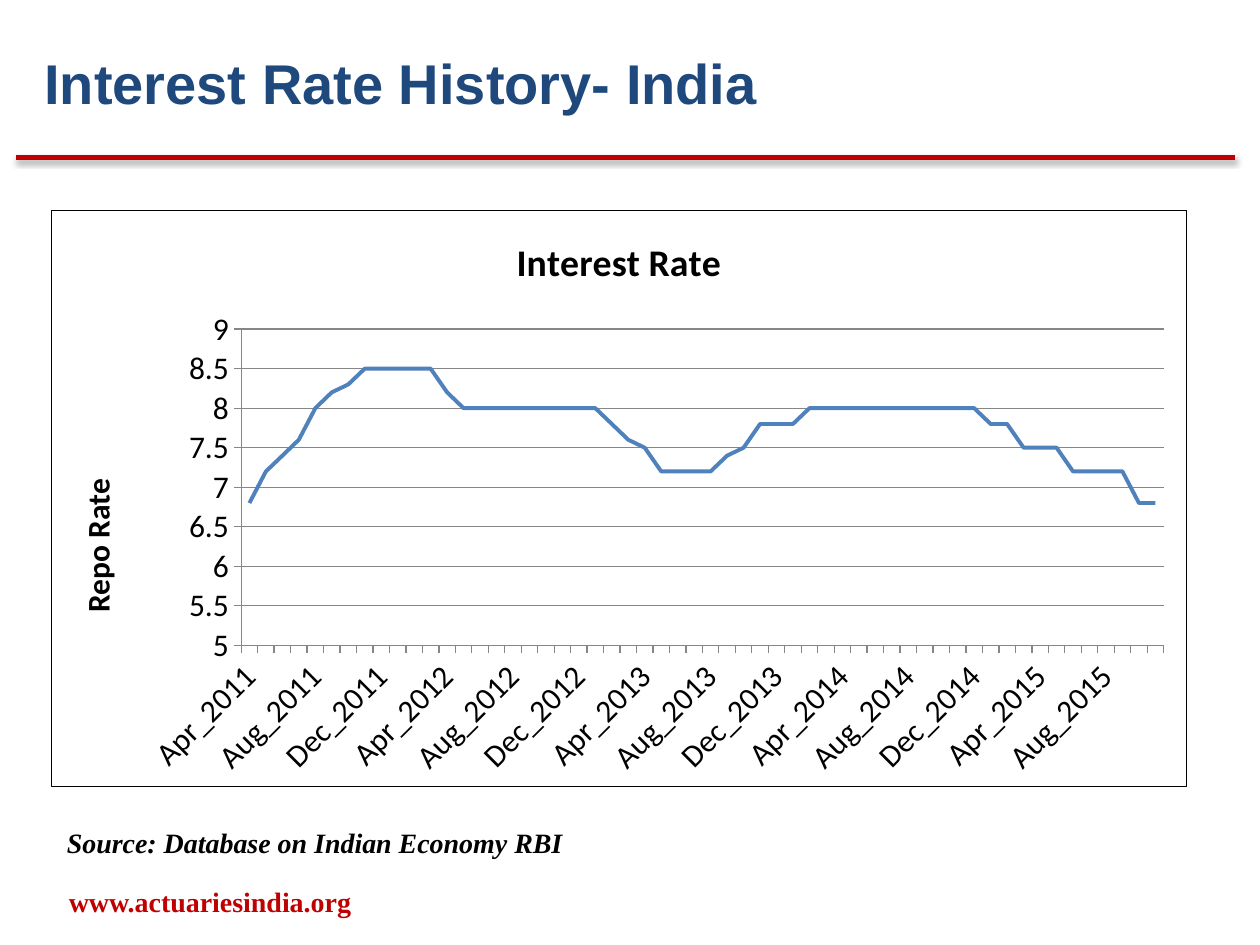
from dataclasses import dataclass
from itertools import chain, repeat

from lxml.etree import SubElement
from pptx import Presentation
from pptx.chart.data import CategoryChartData
from pptx.dml.color import RGBColor
from pptx.enum.chart import XL_CHART_TYPE, XL_MARKER_STYLE, XL_TICK_MARK
from pptx.enum.shapes import MSO_CONNECTOR
from pptx.enum.text import MSO_ANCHOR, PP_ALIGN
from pptx.oxml import parse_xml
from pptx.oxml.ns import nsdecls, qn
from pptx.util import Cm, Pt

COLORS = {
    "title": "1F497D",
    "accent": "C00000",
    "text": "000000",
    "series": "4F81BD",
    "grid": "868686",
}
MONTHS = "Jan Feb Mar Apr May Jun Jul Aug Sep Oct Nov Dec".split()
FIRST_MONTH, FIRST_YEAR = 3, 2011
RATE_RUNS = [
    (6.8, 1), (7.2, 1), (7.4, 1), (7.6, 1), (8, 1), (8.2, 1), (8.3, 1),
    (8.5, 5), (8.2, 1), (8, 9), (7.8, 1), (7.6, 1), (7.5, 1), (7.2, 4),
    (7.4, 1), (7.5, 1), (7.8, 3), (8, 11), (7.8, 2), (7.5, 3), (7.2, 4), (6.8, 2),
]


@dataclass
class Caption:
    text: str
    top: float
    width: float
    height: float
    color: str
    italic: bool


CAPTIONS = [
    Caption("www.actuariesindia.org", 17.65, 8.07, 1.02, "accent", False),
    Caption("Source: Database on Indian Economy RBI", 16.73, 12.29, 0.51, "text", True),
]


def color(name: str) -> RGBColor:
    return RGBColor.from_string(COLORS[name])


def style_font(font, name: str, size: float, color_name: str, bold: bool = True) -> None:
    font.name = name
    font.size = Pt(size)
    font.bold = bold
    font.color.rgb = color(color_name)


def style_line(line, color_name: str, width: float) -> None:
    line.color.rgb = color(color_name)
    line.width = Pt(width)


def add_title(slide) -> None:
    title = slide.shapes.title
    title.left, title.top, title.width, title.height = Cm(0.64), Cm(0.85), Cm(22.89), Cm(1.63)
    title.text_frame.text = "Interest Rate History- India"
    title.text_frame.vertical_anchor = MSO_ANCHOR.TOP
    paragraph = title.text_frame.paragraphs[0]
    paragraph.alignment = PP_ALIGN.LEFT
    style_font(paragraph.font, "Arial", 32, "title")


def add_rule(slide) -> None:
    rule = slide.shapes.add_connector(
        MSO_CONNECTOR.STRAIGHT, Cm(0.33), Cm(3.18), Cm(24.9), Cm(3.18)
    )
    style_line(rule.line, "accent", 3)
    effects = SubElement(rule.element.spPr, qn("a:effectLst"))
    shadow = SubElement(
        effects, qn("a:outerShdw"), blurRad="40000", dist="20000", dir="5400000", rotWithShape="0"
    )
    shadow_color = SubElement(shadow, qn("a:srgbClr"), val=COLORS["text"])
    SubElement(shadow_color, qn("a:alpha"), val="38000")


def add_caption(slide, caption: Caption) -> None:
    box = slide.shapes.add_textbox(
        Cm(0.2), Cm(caption.top), Cm(caption.width), Cm(caption.height)
    )
    frame = box.text_frame
    frame.word_wrap = True
    frame.vertical_anchor = MSO_ANCHOR.MIDDLE
    paragraph = frame.paragraphs[0]
    paragraph.text = caption.text
    paragraph.alignment = PP_ALIGN.CENTER
    style_font(paragraph.font, "Times New Roman", 16, caption.color)
    paragraph.font.italic = caption.italic


def set_layout(parent, index: int, **fractions: float) -> None:
    for old_layout in parent.findall(qn("c:layout")):
        parent.remove(old_layout)
    layout = parse_xml(f"<c:layout {nsdecls('c')}><c:manualLayout/></c:layout>")
    manual = layout[0]
    if "w" in fractions:
        SubElement(manual, qn("c:layoutTarget"), val="inner")
    for key in ("x", "y"):
        SubElement(manual, qn(f"c:{key}Mode"), val="edge")
    for key, fraction in fractions.items():
        SubElement(manual, qn(f"c:{key}"), val=str(fraction))
    parent.insert(index, layout)


def set_title(owner, text: str, size: float) -> None:
    owner.has_title = True
    title = owner.chart_title if hasattr(owner, "chart_title") else owner.axis_title
    title.text_frame.text = text
    style_font(title.text_frame.paragraphs[0].font, "Calibri", size, "text")


def rate_data() -> CategoryChartData:
    rates = list(chain.from_iterable(repeat(rate, count) for rate, count in RATE_RUNS))
    months = range(FIRST_MONTH, FIRST_MONTH + len(rates))
    data = CategoryChartData()
    data.categories = [f"{MONTHS[month % 12]}_{FIRST_YEAR + month // 12}" for month in months]
    data.add_series("Series 1", rates)
    return data


def add_rate_chart(slide) -> None:
    chart = slide.shapes.add_chart(
        XL_CHART_TYPE.LINE, Cm(1.03), Cm(4.23), Cm(22.9), Cm(11.64), rate_data()
    ).chart
    chart.has_legend = False
    style_font(chart.font, "Calibri", 18, "text", bold=False)
    set_title(chart, "Interest Rate", 21.6)

    plot = chart.plots[0]
    plot.vary_by_categories = False
    series = plot.series[0]
    series.smooth = False
    series.marker.style = XL_MARKER_STYLE.NONE
    style_line(series.format.line, "series", 2.25)

    for axis in (chart.category_axis, chart.value_axis):
        axis.major_tick_mark = XL_TICK_MARK.OUTSIDE
        axis.minor_tick_mark = XL_TICK_MARK.NONE
        style_line(axis.format.line, "grid", 0.75)
        style_font(axis.tick_labels.font, "Calibri", 18, "text", bold=False)

    value_axis = chart.value_axis
    value_axis.minimum_scale, value_axis.maximum_scale, value_axis.major_unit = 5, 9, 0.5
    value_axis.tick_labels.number_format = "General"
    value_axis.tick_labels.number_format_is_linked = False
    value_axis.has_major_gridlines = True
    style_line(value_axis.major_gridlines.format.line, "grid", 0.75)
    set_title(value_axis, "Repo Rate ", 18)

    chart_space = chart.element
    category_element = chart_space.find(".//" + qn("c:catAx"))
    category_element.find(qn("c:txPr")).find(qn("a:bodyPr")).set("rot", "-2700000")
    category_element.find(qn("c:noMultiLvlLbl")).addprevious(
        parse_xml(f'<c:tickLblSkip {nsdecls("c")} val="4"/>')
    )
    axis_title = chart_space.find(".//" + qn("c:valAx")).find(qn("c:title"))
    axis_title.find(".//" + qn("a:bodyPr")).set("rot", "-5400000")
    set_layout(axis_title, 1, x=0.016, y=0.443)
    set_layout(
        chart_space.find(".//" + qn("c:plotArea")), 0, x=0.167, y=0.206, w=0.813, h=0.549
    )
    chart_space.find(qn("c:chart")).addnext(parse_xml(
        f'<c:spPr {nsdecls("c", "a")}><a:noFill/><a:ln w="{Pt(0.75)}"><a:solidFill>'
        f'<a:srgbClr val="{COLORS["text"]}"/></a:solidFill></a:ln></c:spPr>'
    ))


def main() -> None:
    presentation = Presentation()
    presentation.slide_width, presentation.slide_height = Cm(25.4), Cm(19.05)
    slide = presentation.slides.add_slide(presentation.slide_layouts[5])
    add_rule(slide)
    add_title(slide)
    add_rate_chart(slide)
    for caption in CAPTIONS:
        add_caption(slide, caption)
    presentation.save("out.pptx")


if __name__ == "__main__":
    main()
